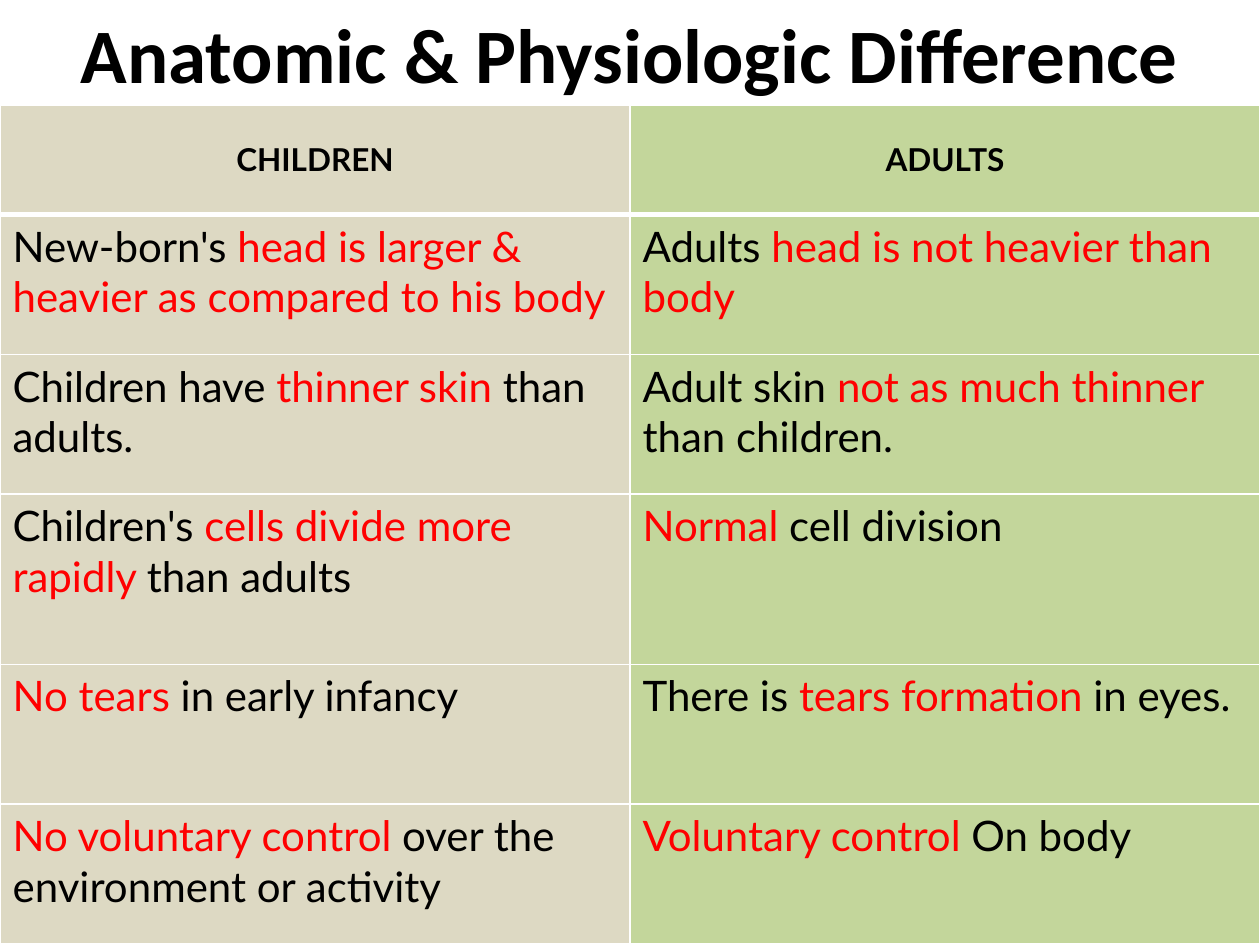
from lxml.etree import SubElement as Sub
from pptx import Presentation
from pptx.dml.color import RGBColor as Rgb
from pptx.enum.text import MSO_ANCHOR as Anchor, PP_ALIGN as Align
from pptx.oxml.ns import qn
from pptx.util import Inches, Pt

BLACK, RED, WHITE = "000000", "FF0000", "FFFFFF"
FILLS = ("DDD9C3", "C3D69B")
HEADS = ("CHILDREN", "ADULTS")
# Row heights as shares of the slide's height
ROWS = (0.116, 0.148, 0.148, 0.18, 0.148, 0.148)
TOP = 0.111

# Each cell is a list of runs; a run that starts with * is red
FACTS = (
    (("New-born's ", "*head is larger & heavier as compared to his body"),
     ("Adults ", "*head is not heavier than body")),
    (("Children have ", "*thinner skin ", "than adults."),
     ("Adult skin ", "*not as much thinner ", "than children.")),
    (("Children's ", "*cells divide more rapidly ", "than adults"),
     ("*Normal", " cell division")),
    (("*No tears ", "in early infancy"),
     ("There is ", "*tears formation ", "in eyes.")),
    (("*No voluntary control ", "over the environment or activity"),
     ("*Voluntary control ", "On body")),
)


def color(code):
    return Rgb.from_string(code)


class Deck:
    """Holds the style and the current slide; lengths are shares of its size."""

    def __init__(self, wide=10, high=7.5):
        self.file = Presentation()
        self.file.slide_width = self.wide = Inches(wide)
        self.file.slide_height = self.high = Inches(high)
        self.slide = self.file.slides.add_slide(self.file.slide_layouts[6])

    def box(self, x, y, w, h):
        return (round(x * self.wide), round(y * self.high),
                round(w * self.wide), round(h * self.high))

    def text(self, para, words, size, face="Lato", bold=False):
        run = para.add_run()
        run.text = words.removeprefix("*")
        font = run.font
        font.name, font.size, font.bold = face, Pt(size), bold
        font.color.rgb = color(RED if words.startswith("*") else BLACK)

    def title(self, words, high):
        frame = self.slide.shapes.add_textbox(*self.box(0, 0, 1, high)).text_frame
        frame.word_wrap = True
        frame.vertical_anchor = Anchor.MIDDLE
        para = frame.paragraphs[0]
        para.alignment = Align.CENTER
        self.text(para, words, 44, "Calibri", True)

    def edge(self, cell, side, width):
        line = Sub(cell._tc.get_or_add_tcPr(), qn(f"a:ln{side}"), w=str(Pt(width)))
        Sub(Sub(line, qn("a:solidFill")), qn("a:srgbClr"), val=WHITE)

    def cell(self, cell, runs, fill, head):
        for side in "LRTB":
            self.edge(cell, side, 3 if head and side == "B" else 1)
        cell.fill.solid()
        cell.fill.fore_color.rgb = color(fill)
        cell.vertical_anchor = Anchor.MIDDLE if head else Anchor.TOP
        para = cell.text_frame.paragraphs[0]
        para.alignment = Align.CENTER if head else Align.LEFT
        for words in runs:
            self.text(para, words, 18 if head else 24, bold=head)

    def table(self, heads, facts, top, rows):
        grid = [[(words,) for words in heads], *facts]
        place = self.box(0, top, 1, sum(rows))
        table = self.slide.shapes.add_table(len(grid), len(heads), *place).table
        for r, (line, share) in enumerate(zip(grid, rows)):
            table.rows[r].height = round(share * self.high)
            for c, runs in enumerate(line):
                self.cell(table.cell(r, c), runs, FILLS[c], r == 0)


def main():
    deck = Deck()
    deck.title("Anatomic & Physiologic Difference", TOP)
    deck.table(HEADS, FACTS, TOP, ROWS)
    deck.file.save("out.pptx")


if __name__ == "__main__":
    main()
